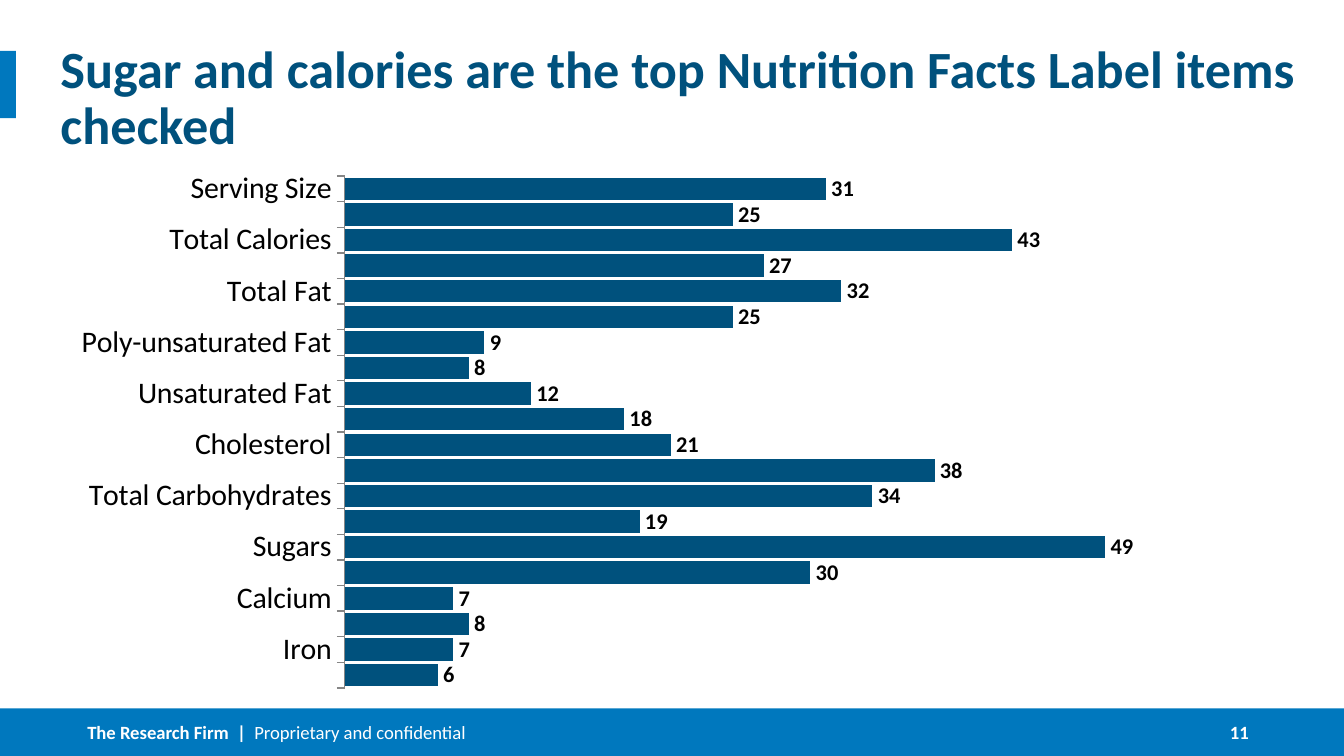
from dataclasses import dataclass

from lxml.etree import SubElement
from pptx import Presentation
from pptx.chart.data import CategoryChartData
from pptx.dml.color import RGBColor
from pptx.enum.chart import XL_CHART_TYPE, XL_LABEL_POSITION, XL_TICK_LABEL_POSITION, XL_TICK_MARK
from pptx.enum.shapes import MSO_SHAPE
from pptx.enum.text import MSO_ANCHOR, PP_ALIGN
from pptx.oxml.ns import qn
from pptx.util import Pt


@dataclass(frozen=True)
class Theme:
    font: str = "Calibri"
    blue: RGBColor = RGBColor(0x00, 0x78, 0xBE)
    navy: RGBColor = RGBColor(0x00, 0x51, 0x7D)
    white: RGBColor = RGBColor(0xFF, 0xFF, 0xFF)
    black: RGBColor = RGBColor(0, 0, 0)
    grey: RGBColor = RGBColor(0x86, 0x86, 0x86)
    title: int = 28
    chart: int = 18
    axis: int = 16
    label: int = 12
    footer: int = 10


THEME = Theme()

CHECKED = {
    "Serving Size": 31,
    "Servings per container": 25,
    "Total Calories": 43,
    "Calories from Fat": 27,
    "Total Fat": 32,
    "Saturated Fat": 25,
    "Poly-unsaturated Fat": 9,
    "Mono-unsaturated Fat": 8,
    "Unsaturated Fat": 12,
    "Trans Fatty Acids/Trans Fat": 18,
    "Cholesterol": 21,
    "Sodium": 38,
    "Total Carbohydrates": 34,
    "Dietary Fiber": 19,
    "Sugars": 49,
    "Protein": 30,
    "Calcium": 7,
    "Vitamin C": 8,
    "Iron": 7,
    "Vitamin A": 6,
}


def style_font(font, size, color, bold=False):
    font.name = THEME.font
    font.size = Pt(size)
    font.color.rgb = color
    font.bold = bold


def add_bar(slide, x, y, w, h):
    s = slide.shapes.add_shape(MSO_SHAPE.RECTANGLE, Pt(x), Pt(y), Pt(w), Pt(h))
    s.shadow.inherit = False
    s.fill.solid()
    s.fill.fore_color.rgb = THEME.blue
    s.line.fill.background()


def add_text(slide, x, y, w, h, runs, size, color, anchor=MSO_ANCHOR.MIDDLE, wrap=True):
    tf = slide.shapes.add_textbox(Pt(x), Pt(y), Pt(w), Pt(h)).text_frame
    tf.margin_left = tf.margin_right = tf.margin_top = tf.margin_bottom = 0
    tf.vertical_anchor = anchor
    tf.word_wrap = wrap
    p = tf.paragraphs[0]
    for text, bold in runs:
        r = p.add_run()
        r.text = text
        style_font(r.font, size, color, bold)
    return p


def add_title(slide, x, y, w, h, text):
    add_bar(slide, x, y + 4.3, 8.6, 36)
    p = add_text(slide, x + 32.4, y, w - 32.4, h, [(text, True)],
                 THEME.title, THEME.navy, MSO_ANCHOR.TOP)
    p.line_spacing = 0.9
    p.space_after = Pt(2)


def add_footer(slide, x, y, w, h, owner, notice, number):
    add_bar(slide, x, y, w, h)
    add_text(slide, x + 46.8, y, 296, h, [(f"{owner}  |  ", True), (notice, False)],
             THEME.footer, THEME.white)
    p = add_text(slide, x + w - 87, y, 36, h, [(number, True)],
                 THEME.footer, THEME.white, wrap=False)
    p.alignment = PP_ALIGN.RIGHT


def set_plot_area(chart, **fractions):
    plot_area = chart._chartSpace.chart.plotArea
    for old in plot_area.findall(qn("c:layout")):
        plot_area.remove(old)
    layout = SubElement(plot_area, qn("c:layout"))
    plot_area.insert(0, layout)
    manual = SubElement(layout, qn("c:manualLayout"))
    settings = {"layoutTarget": "inner", "xMode": "edge", "yMode": "edge", **fractions}
    for name, value in settings.items():
        SubElement(manual, qn(f"c:{name}")).set("val", str(value))


def add_bar_chart(slide, x, y, w, h, values):
    data = CategoryChartData(number_format="#,##0")
    data.categories = list(values)
    data.add_series("Series 1", list(values.values()))
    chart = slide.shapes.add_chart(XL_CHART_TYPE.BAR_CLUSTERED,
                                   Pt(x), Pt(y), Pt(w), Pt(h), data).chart
    chart.has_legend = False
    chart.has_title = False
    style_font(chart.font, THEME.chart, THEME.black)
    set_plot_area(chart, x=0.23, y=0.03, w=0.75, h=0.95)

    cat = chart.category_axis
    cat.reverse_order = True
    cat.major_tick_mark = XL_TICK_MARK.OUTSIDE
    cat.tick_label_position = XL_TICK_LABEL_POSITION.LOW
    cat.format.line.color.rgb = THEME.grey
    style_font(cat.tick_labels.font, THEME.axis, THEME.black)

    val = chart.value_axis
    val.minimum_scale, val.maximum_scale = 0, 60
    val.has_major_gridlines = False
    val.visible = False

    plot = chart.plots[0]
    plot.gap_width = 14
    plot.overlap = -10
    plot.vary_by_categories = False
    fill = plot.series[0].format.fill
    fill.solid()
    fill.fore_color.rgb = THEME.navy

    plot.has_data_labels = True
    labels = plot.data_labels
    labels.show_value = True
    labels.number_format = "#,##0"
    labels.number_format_is_linked = False
    labels.position = XL_LABEL_POSITION.OUTSIDE_END
    style_font(labels.font, THEME.label, THEME.black, True)


def main():
    prs = Presentation()
    prs.slide_width, prs.slide_height = Pt(720), Pt(405)
    slide = prs.slides.add_slide(prs.slide_layouts[6])
    add_footer(slide, 0, 379.6, 720, 25.4,
               "The Research Firm", "Proprietary and confidential", "11")
    add_title(slide, 0, 23, 698.4, 36,
              "Sugar and calories are the top Nutrition Facts Label items checked")
    add_bar_chart(slide, 31.7, 85.7, 665.3, 288.7, CHECKED)
    prs.save("out.pptx")


if __name__ == "__main__":
    main()
